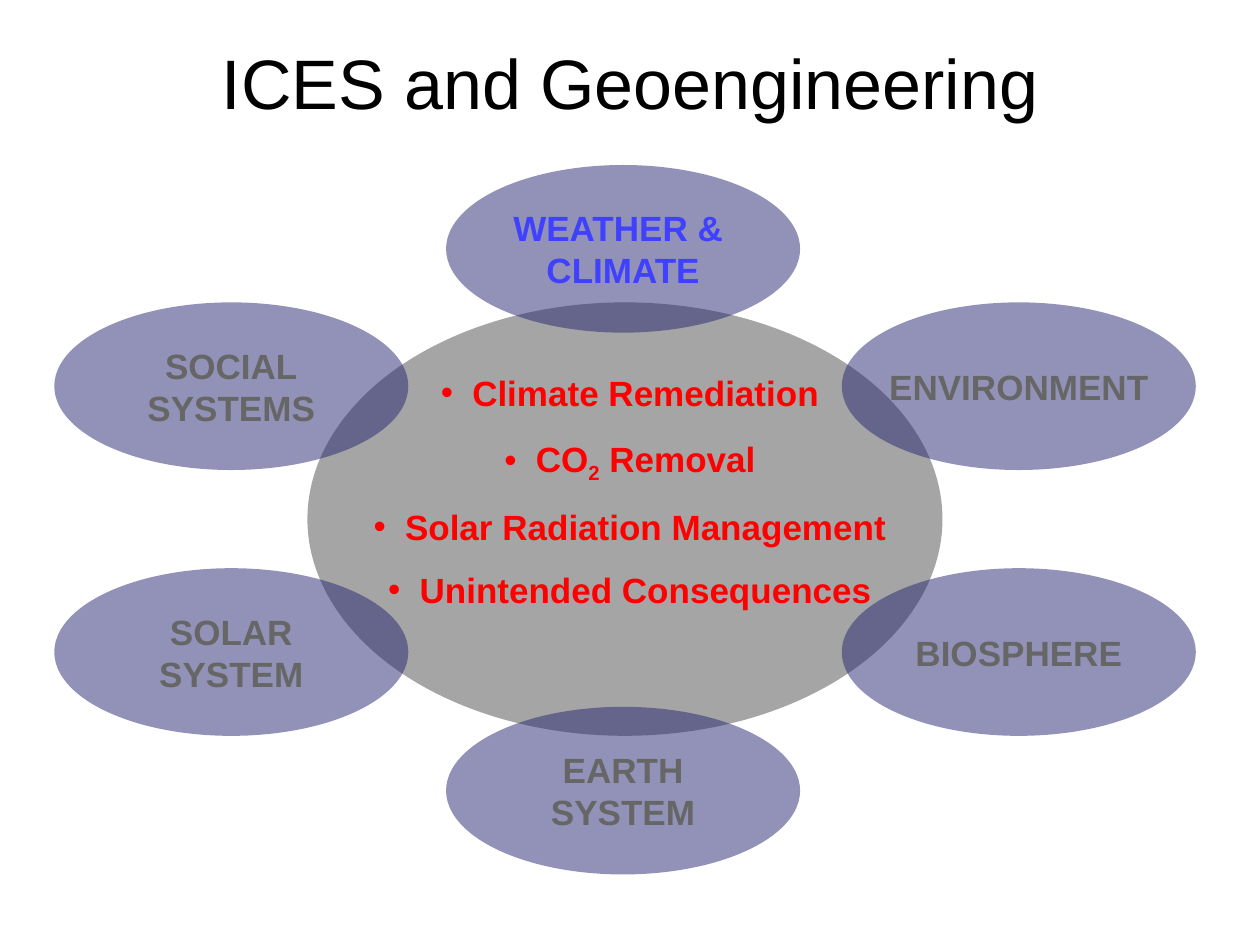
from lxml import etree
from pptx import Presentation
from pptx.dml.color import RGBColor
from pptx.enum.shapes import MSO_SHAPE
from pptx.enum.text import MSO_ANCHOR, MSO_AUTO_SIZE, PP_ALIGN
from pptx.oxml.ns import qn
from pptx.util import Pt

OVAL = MSO_SHAPE.OVAL
MIDDLE, TOP = MSO_ANCHOR.MIDDLE, MSO_ANCHOR.TOP
CENTER, FIXED = PP_ALIGN.CENTER, MSO_AUTO_SIZE.NONE
BLACK = RGBColor(0, 0, 0)
RED = RGBColor(255, 0, 0)
BLUE = RGBColor(0x40, 0x40, 0xFF)
SLATE = RGBColor(0x66, 0x66, 0x66)
GREY = RGBColor(0x80, 0x80, 0x80)
NAVY = RGBColor(0x26, 0x26, 0x73)

TITLE = "ICES and Geoengineering"
TOPICS = [
    ["Climate Remediation"],
    ["CO", ("2", -25), " Removal"],
    ["Solar Radiation Management"],
    ["Unintended Consequences"],
]
LEFT, MID, RIGHT = 31, 254.9, 481
ROWS = (94.3, 172.8, 324.7, 403.9)
FIELDS = [
    (["ENVIRONMENT"], RIGHT, 1, SLATE),
    (["BIOSPHERE"], RIGHT, 2, SLATE),
    (["EARTH", "SYSTEM"], MID, 3, SLATE),
    (["WEATHER & ", "CLIMATE"], MID, 0, BLUE),
    (["SOCIAL", "SYSTEMS"], LEFT, 1, SLATE),
    (["SOLAR", "SYSTEM"], LEFT, 2, SLATE),
]
WIDE, HIGH = 202.3, 95.8
CORE = (175.7, ROWS[1], 362.9, ROWS[2] + HIGH - ROWS[1])


def write(shape, lines, size=20, color=SLATE, bold=True, anchor=MIDDLE,
          wrap=True, side=7.2, space=None, bullet=None):
    frame = shape.text_frame
    frame.auto_size = FIXED
    frame.word_wrap = wrap
    frame.vertical_anchor = anchor
    frame.margin_left = frame.margin_right = Pt(side)
    frame.margin_top = frame.margin_bottom = Pt(3.6)
    for i, line in enumerate(lines):
        para = frame.add_paragraph() if i else frame.paragraphs[0]
        para.alignment = CENTER
        if space:
            para.line_spacing = space
        if bullet:
            props = para._p.get_or_add_pPr()
            props.set("marL", str(Pt(18)))
            props.set("indent", str(-Pt(18)))
            etree.SubElement(props, qn("a:buFont")).set("typeface", "Arial")
            etree.SubElement(props, qn("a:buChar")).set("char", bullet)
        for part in [line] if isinstance(line, str) else line:
            text, base = (part, 0) if isinstance(part, str) else part
            run = para.add_run()
            run.text = text
            font = run.font
            font.name, font.size, font.bold = "Arial", Pt(size), bold
            font.color.rgb = color
            if base:
                run._r.get_or_add_rPr().set("baseline", str(base * 1000))


def oval(shapes, box, color, alpha):
    shape = shapes.add_shape(OVAL, *map(Pt, box))
    shape.shadow.inherit = False
    shape.line.fill.background()
    shape.fill.solid()
    shape.fill.fore_color.rgb = color
    tint = shape._element.spPr.find(".//" + qn("a:srgbClr"))
    etree.SubElement(tint, qn("a:alpha")).set("val", str(alpha * 1000))
    return shape


def main():
    """Build the slide of fields around geoengineering."""
    deck = Presentation()
    deck.slide_width, deck.slide_height = Pt(720), Pt(540)
    slide = deck.slides.add_slide(deck.slide_layouts[5])
    shapes = slide.shapes

    title = shapes.title
    title.left, title.top, title.width, title.height = map(Pt, (36, 21.6, 648, 49.7))
    write(title, [TITLE], size=40, color=BLACK, bold=False)

    group = shapes.add_group_shape()
    oval(group.shapes, CORE, GREY, 70)
    for lines, left, row, color in FIELDS:
        shape = oval(group.shapes, (left, ROWS[row], WIDE, HIGH), NAVY, 50)
        write(shape, lines, color=color, wrap=False, side=0)

    box = shapes.add_textbox(*map(Pt, (180, 196.6, 360, 151.2)))
    write(box, TOPICS, color=RED, anchor=TOP, space=1.5, bullet="•")
    deck.save("out.pptx")


if __name__ == "__main__":
    main()
